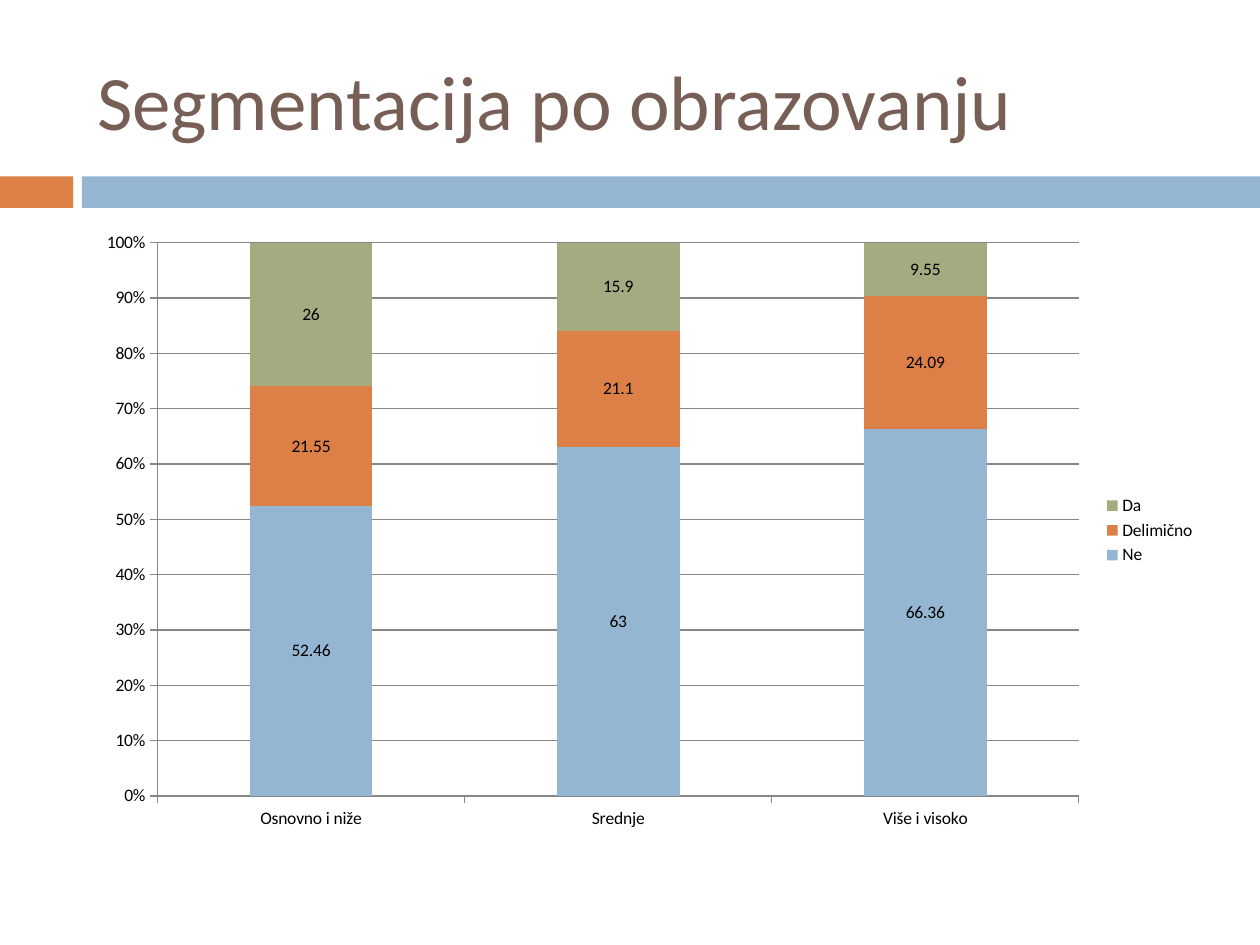
from typing import NamedTuple

from pptx import Presentation
from pptx.chart.data import CategoryChartData as Data
from pptx.dml.color import RGBColor as RGB
from pptx.enum.chart import XL_CHART_TYPE as Kind
from pptx.enum.chart import XL_LABEL_POSITION as Spot
from pptx.enum.chart import XL_LEGEND_POSITION as Side
from pptx.enum.chart import XL_TICK_MARK as Tick
from pptx.enum.shapes import MSO_SHAPE as Shape
from pptx.enum.text import MSO_ANCHOR as Anchor
from pptx.enum.text import PP_ALIGN as Align
from pptx.util import Inches, Pt

BLUE = RGB(0x94, 0xB6, 0xD2)
ORANGE = RGB(0xDD, 0x80, 0x47)
GREEN = RGB(0xA5, 0xAB, 0x81)
BROWN = RGB(0x77, 0x5F, 0x55)
GREY = RGB(0x87, 0x87, 0x87)
BLACK = RGB(0, 0, 0)
FONT = "Calibri"
WIDE, HIGH = 10, 7.5
LEFT, SPAN = 0.67, 8.92


class Box(NamedTuple):
    left: float
    top: float
    width: float
    height: float

    def emu(self) -> list[int]:
        return [Inches(part) for part in self]


class Band(NamedTuple):
    start: float
    end: float
    color: RGB


class Group(NamedTuple):
    name: str
    color: RGB
    shares: tuple[float, ...]


BANDS = [Band(0, 0.58, ORANGE), Band(0.65, WIDE, BLUE)]
LEVELS = ["Osnovno i niže", "Srednje", "Više i visoko"]
GROUPS = [
    Group("Ne", BLUE, (52.46, 63, 66.36)),
    Group("Delimično", ORANGE, (21.55, 21.1, 24.09)),
    Group("Da", GREEN, (26, 15.9, 9.55)),
]


def draw_band(slide, band: Band) -> None:
    box = Box(band.start, 1.4, band.end - band.start, 0.25)
    shape = slide.shapes.add_shape(Shape.RECTANGLE, *box.emu())
    shape.shadow.inherit = False
    shape.fill.solid()
    shape.fill.fore_color.rgb = band.color
    shape.line.fill.background()


def set_title(slide, text: str) -> None:
    title = slide.shapes.title
    title.left, title.top, title.width, title.height = Box(LEFT, 0.25, SPAN, 1.08).emu()
    frame = title.text_frame
    frame.text = text
    frame.vertical_anchor = Anchor.MIDDLE
    line = frame.paragraphs[0]
    line.alignment = Align.LEFT
    font = line.runs[0].font
    font.name, font.size, font.color.rgb = FONT, Pt(44), BROWN


def style_line(line) -> None:
    line.color.rgb = GREY
    line.width = Pt(0.75)


def draw_chart(slide, levels: list[str], groups: list[Group]) -> None:
    data = Data()
    data.categories = levels
    for group in groups:
        data.add_series(group.name, group.shares)
    box = Box(LEFT, 1.75, SPAN, 4.92)
    chart = slide.shapes.add_chart(Kind.COLUMN_STACKED_100, *box.emu(), data).chart
    chart.has_title = False
    chart.font.name, chart.font.size, chart.font.color.rgb = FONT, Pt(10), BLACK

    chart.has_legend = True
    chart.legend.position = Side.RIGHT
    chart.legend.include_in_layout = False

    for axis in (chart.category_axis, chart.value_axis):
        axis.major_tick_mark = Tick.OUTSIDE
        axis.minor_tick_mark = Tick.NONE
        style_line(axis.format.line)
    scale = chart.value_axis
    scale.has_major_gridlines = True
    style_line(scale.major_gridlines.format.line)
    scale.tick_labels.number_format = "0%"
    scale.tick_labels.number_format_is_linked = False

    plot = chart.plots[0]
    plot.gap_width, plot.overlap = 150, 100
    plot.vary_by_categories = False
    for series, group in zip(plot.series, groups):
        series.format.fill.solid()
        series.format.fill.fore_color.rgb = group.color
        labels = series.data_labels
        labels.show_value = True
        labels.position = Spot.CENTER


def main() -> None:
    deck = Presentation()
    deck.slide_width, deck.slide_height = Inches(WIDE), Inches(HIGH)
    slide = deck.slides.add_slide(deck.slide_layouts[5])
    for band in BANDS:
        draw_band(slide, band)
    set_title(slide, "Segmentacija po obrazovanju")
    draw_chart(slide, LEVELS, GROUPS)
    deck.save("out.pptx")


if __name__ == "__main__":
    main()
